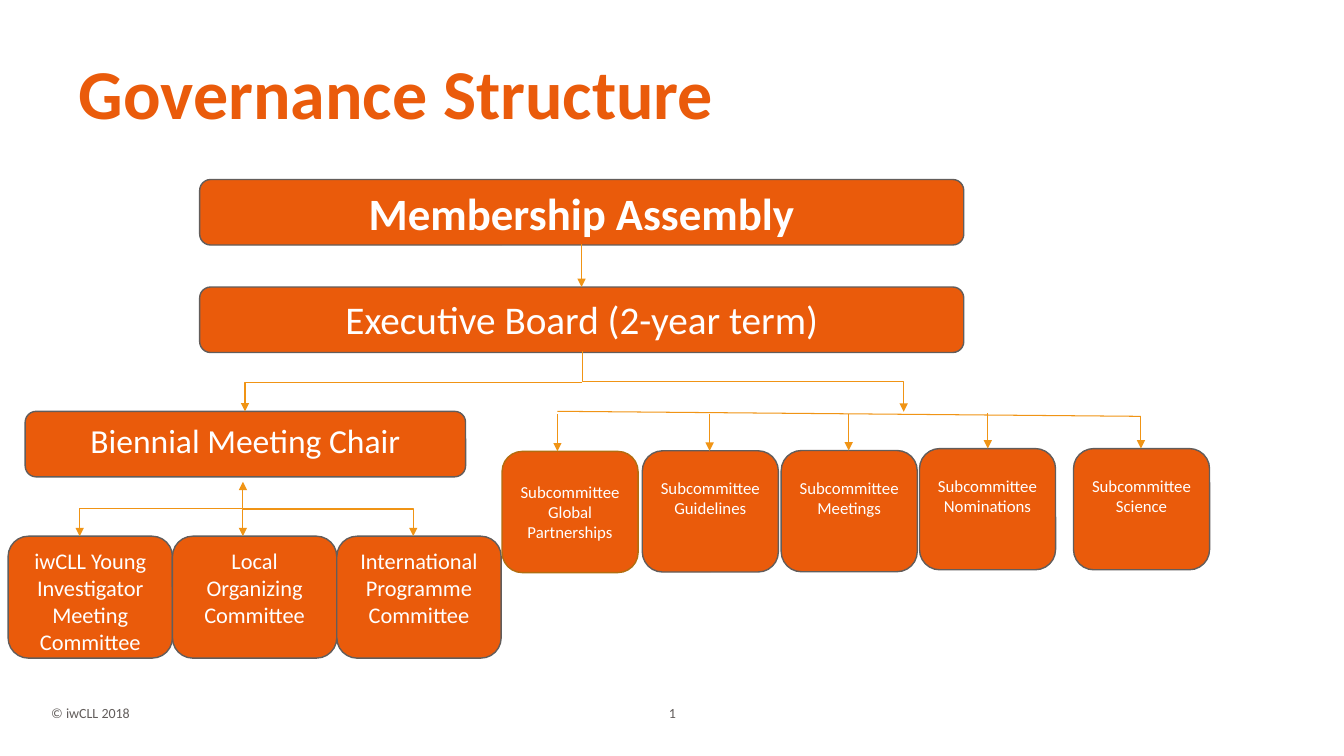
from lxml import etree
from pptx import Presentation
from pptx.dml.color import RGBColor
from pptx.enum.shapes import MSO_CONNECTOR, MSO_SHAPE
from pptx.enum.text import MSO_ANCHOR, PP_ALIGN
from pptx.oxml.ns import qn
from pptx.util import Pt

ORANGE = RGBColor(0xEA, 0x5B, 0x0B)
AMBER = RGBColor(0xF0, 0x94, 0x15)
BROWN = RGBColor(0xB2, 0x6D, 0x10)
GREY = RGBColor(0x62, 0x5D, 0x5B)
WHITE = RGBColor(0xFF, 0xFF, 0xFF)
STRAIGHT, ELBOW = MSO_CONNECTOR.STRAIGHT, MSO_CONNECTOR.ELBOW
ROUND = MSO_SHAPE.ROUNDED_RECTANGLE
TOP, MIDDLE = MSO_ANCHOR.TOP, MSO_ANCHOR.MIDDLE
LEFT, CENTER = PP_ALIGN.LEFT, PP_ALIGN.CENTER


class Chart:
    """Holds the style and the slide that is being drawn."""
    face = "Calibri"

    def __init__(self, slide):
        self.slide = slide
        self.shapes = slide.shapes

    def put(self, item, **form):
        for name, value in form.items():
            setattr(item, name, value)

    def style(self, font, size, color, bold=False):
        self.put(font, name=self.face, size=Pt(size), bold=bold)
        font.color.rgb = color

    def letter(self, frame, text, size, color, align, bold=False, **form):
        self.put(frame, word_wrap=True, **form)
        frame.text = text
        for para in frame.paragraphs:
            para.alignment = align
            self.style(para.font, size, color, bold)

    def title(self, text, x, y, w, h):
        head = self.shapes.title
        self.put(head, left=Pt(x), top=Pt(y), width=Pt(w), height=Pt(h))
        self.letter(head.text_frame, text, 50, ORANGE, LEFT, True,
                    vertical_anchor=TOP, margin_top=Pt(13.6))
        head.text_frame.paragraphs[0].line_spacing = 0.9

    def label(self, text, x, y, w, h, align):
        area = self.shapes.add_textbox(Pt(x), Pt(y), Pt(w), Pt(h))
        self.letter(area.text_frame, text, 10, GREY, align)
        return area

    def number(self, *place):
        """Add a label whose text is the slide number field."""
        run = self.label("1", *place, CENTER).text_frame.paragraphs[0].runs[0]
        self.style(run.font, 10, GREY)
        node = run._r
        node.tag = qn("a:fld")
        node.set("id", "{B6F15528-21DE-4FAA-801E-634DDDAF4B2B}")
        node.set("type", "slidenum")

    def box(self, text, x, y, w, h, size, edge=GREY, bold=False, **form):
        card = self.shapes.add_shape(ROUND, Pt(x), Pt(y), Pt(w), Pt(h))
        card.shadow.inherit = False
        card.fill.solid()
        card.fill.fore_color.rgb = ORANGE
        card.line.color.rgb = edge
        card.line.width = Pt(1)
        self.letter(card.text_frame, text, size, WHITE, CENTER, bold, **form)

    def link(self, x1, y1, x2, y2, ends=("tailEnd",), kind=STRAIGHT):
        wire = self.shapes.add_connector(kind, Pt(x1), Pt(y1), Pt(x2), Pt(y2))
        wire.line.color.rgb = AMBER
        wire.line.width = Pt(0.75)
        props = wire._element.spPr
        for end in ends:
            etree.SubElement(props.find(qn("a:ln")), qn("a:" + end), type="triangle")
        etree.SubElement(props, qn("a:effectLst"))
        return props

    def bend(self, x, y, w, h, preset, ends=("tailEnd",), **turn):
        """Add an elbow by its unturned frame, then turn or flip it."""
        props = self.link(x, y, x + w, y + h, ends, ELBOW)
        props.find(qn("a:prstGeom")).set("prst", preset)
        for name, value in turn.items():
            props.find(qn("a:xfrm")).set(name, value)


def main():
    deck = Presentation()
    deck.slide_width, deck.slide_height = Pt(960), Pt(540)
    chart = Chart(deck.slides.add_slide(deck.slide_layouts[5]))
    chart.title("Governance Structure", 49, 28.8, 751, 70.6)
    chart.number(424.8, 499.7, 110.9, 20.9)
    chart.label("© iwCLL 2018", 29.5, 499.7, 71.3, 20.9, LEFT)

    chart.box("Membership Assembly", 142.6, 128.2, 545.8, 46.8, 32,
              bold=True, vertical_anchor=MIDDLE)
    chart.box("Executive Board (2-year term)", 142.6, 205, 545.8, 46.8, 28,
              vertical_anchor=TOP)
    chart.box("Biennial Meeting Chair", 18, 293.8, 314.6, 46.8, 24,
              vertical_anchor=TOP)
    teams = ("iwCLL Young Investigator Meeting Committee",
             "Local Organizing Committee",
             "International Programme Committee")
    for i, team in enumerate(teams):
        chart.box(team, 5.8 + 117.4 * i, 383, 117.4, 87.1, 16, vertical_anchor=TOP)

    chart.link(415.4, 174.6, 415.4, 205)
    chart.bend(509, 157.7, 43.2, 229.7, "bentConnector3", rot="16200000", flipH="1")
    chart.bend(175, 272.9, 240.5, 20.9, "bentConnector2", rot="10800000", flipV="1")
    chart.bend(95.8, 305.3, 38.9, 116.6, "bentConnector3",
               ("headEnd", "tailEnd"), rot="5400000")
    chart.bend(173.5, 363.6, 121.7, 19.4, "bentConnector2")
    chart.link(173.5, 363.6, 173.5, 383)

    # Name, left, top, arrow position, arrow start, edge, bottom inset
    panels = (
        ("Subcommittee Global Partnerships", 358.6, 322.4, 398.2, 296, BROWN, 3.6),
        ("Subcommittee\nGuidelines", 458.8, 322, 506.9, 296, GREY, 23.1),
        ("Subcommittee\nMeetings", 558, 321.8, 606.2, 296, GREY, 23.1),
        ("Subcommittee\nNominations", 656.8, 320.4, 705.6, 295.2, GREY, 23.1),
        ("Subcommittee\nScience", 766.8, 320.4, 815, 297.4, GREY, 23.1),
    )
    for name, x, y, mid, start, edge, inset in panels:
        chart.box(name, x, y, 97.2, 86.6, 12, edge,
                  vertical_anchor=MIDDLE, margin_bottom=Pt(inset))
        chart.link(mid, start, mid, y)
    chart.link(398.2, 293.8, 815, 297.4, ())
    deck.save("out.pptx")


if __name__ == "__main__":
    main()
